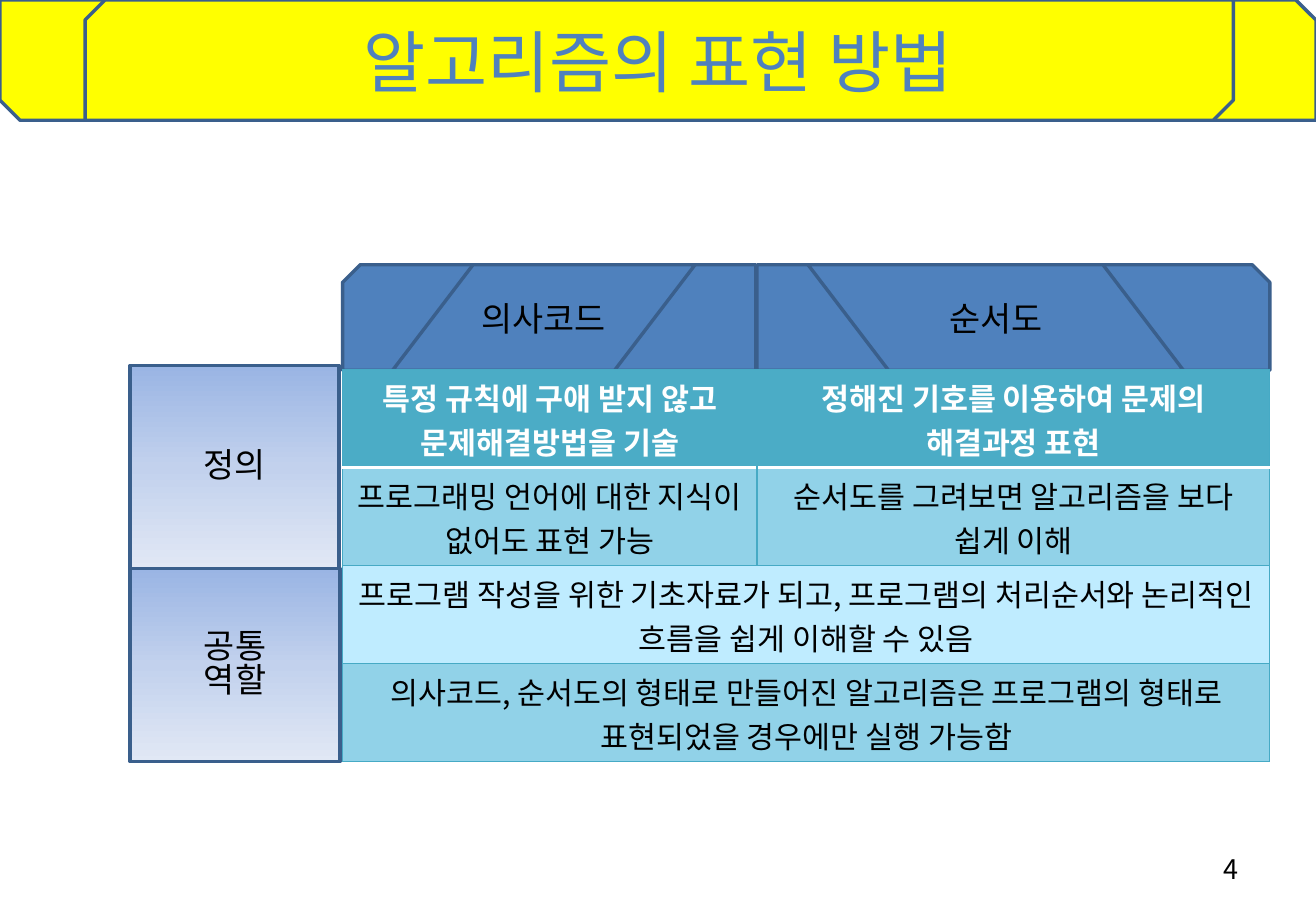
from copy import deepcopy
from dataclasses import dataclass
from typing import Optional

from lxml.etree import SubElement
from pptx import Presentation
from pptx.dml.color import RGBColor
from pptx.enum.shapes import MSO_SHAPE
from pptx.enum.text import MSO_ANCHOR, MSO_AUTO_SIZE, PP_ALIGN
from pptx.oxml.ns import qn
from pptx.util import Inches, Pt

FONT = "Noto Sans CJK KR"
CELL = Inches(0.1)  # side of one grid square
COLUMNS, ROWS = 108.3, 75

BLACK = RGBColor(0x00, 0x00, 0x00)
WHITE = RGBColor(0xFF, 0xFF, 0xFF)
YELLOW = RGBColor(0xFF, 0xFF, 0x00)
BLUE = RGBColor(0x4F, 0x81, 0xBD)
OUTLINE = RGBColor(0x3A, 0x5F, 0x8C)
TEAL = RGBColor(0x4B, 0xAC, 0xC6)
TEAL_EDGE = RGBColor(0x46, 0xAA, 0xC5)
BAND_DARK = RGBColor(0x91, 0xD2, 0xE8)
BAND_LIGHT = RGBColor(0xBF, 0xEC, 0xFF)
LABEL_GRADIENT = (
    (0, RGBColor(0x9A, 0xB5, 0xE4)),
    (0.5, RGBColor(0xC2, 0xD1, 0xED)),
    (1, RGBColor(0xE1, 0xE8, 0xF5)),
)


@dataclass(frozen=True)
class Area:
    """Place on the slide in grid columns and rows."""
    left: float
    top: float
    width: float
    height: float

    def emu(self) -> tuple[int, ...]:
        return tuple(round(n * CELL) for n in (self.left, self.top, self.width, self.height))


@dataclass(frozen=True)
class Block:
    kind: MSO_SHAPE
    area: Area
    fill: Optional[RGBColor] = None  # None gives the label gradient
    text: str = ""
    flip: str = ""
    adjustment: Optional[float] = None
    line_spacing: Optional[float] = None


@dataclass(frozen=True)
class TableRow:
    texts: tuple[str, ...]  # a single text spans both columns
    fill: RGBColor
    color: RGBColor = BLACK
    bold: bool = False


TITLE_AREA = Area(0, 0, COLUMNS, 9.9)
NUMBER_AREA = Area(77.6, 69.5, 25.3, 4)
TABLE_AREA = Area(28.2, 30.4, 76.3, 32.3)
TABLE_COLUMNS = (34.1, 42.2)
HEAD_TOP, HEAD_HEIGHT = 21.8, 8.7
SLANT = 0.762

BANNERS = (
    Block(MSO_SHAPE.SNIP_2_DIAG_RECTANGLE, TITLE_AREA, YELLOW),
    Block(MSO_SHAPE.SNIP_2_DIAG_RECTANGLE, Area(7, 0, 94.5, 9.9), YELLOW, flip="flipV"),
)
COLUMN_HEADS = (
    Block(MSO_SHAPE.SNIP_1_RECTANGLE, Area(28.2, HEAD_TOP, 34, HEAD_HEIGHT), BLUE, flip="flipH"),
    Block(MSO_SHAPE.PARALLELOGRAM, Area(32.3, HEAD_TOP, 24.9, HEAD_HEIGHT), BLUE,
          "의사코드", adjustment=SLANT),
    Block(MSO_SHAPE.SNIP_1_RECTANGLE, Area(62.3, HEAD_TOP, 42.2, HEAD_HEIGHT), BLUE),
    Block(MSO_SHAPE.PARALLELOGRAM, Area(66.5, HEAD_TOP, 30.9, HEAD_HEIGHT), BLUE,
          "순서도", "flipH", SLANT),
)
ROW_LABELS = (
    Block(MSO_SHAPE.RECTANGLE, Area(10.7, 30.1, 17.2, 16.8), text="정의", line_spacing=0.85),
    Block(MSO_SHAPE.RECTANGLE, Area(10.7, 46.8, 17.3, 15.9), text="공통\n역할", line_spacing=0.85),
)
TABLE_ROWS = (
    TableRow(("특정 규칙에 구애 받지 않고 문제해결방법을 기술",
              "정해진 기호를 이용하여 문제의 해결과정 표현"), TEAL, WHITE, True),
    TableRow(("프로그래밍 언어에 대한 지식이 없어도 표현 가능",
              "순서도를 그려보면 알고리즘을 보다 쉽게 이해"), BAND_DARK),
    TableRow(("프로그램 작성을 위한 기초자료가 되고, 프로그램의 처리순서와 "
              "논리적인 흐름을 쉽게 이해할 수 있음",), BAND_LIGHT),
    TableRow(("의사코드, 순서도의 형태로 만들어진 알고리즘은 프로그램의 형태로 "
              "표현되었을 경우에만 실행 가능함",), BAND_DARK),
)


def write(frame, text: str, size: float, color: RGBColor, bold: bool = False,
          align: PP_ALIGN = PP_ALIGN.CENTER, line_spacing: Optional[float] = None) -> None:
    frame.text = text
    frame.word_wrap = True
    frame.vertical_anchor = MSO_ANCHOR.MIDDLE
    for paragraph in frame.paragraphs:
        paragraph.alignment = align
        if line_spacing:
            paragraph.line_spacing = line_spacing
        for run in paragraph.runs:
            run.font.name = FONT
            run.font.size = Pt(size)
            run.font.bold = bold
            run.font.color.rgb = color
            SubElement(run.font._element, qn("a:ea"), typeface=FONT)


def fill_with_gradient(shape) -> None:
    shape.fill.gradient()
    shape.fill.gradient_angle = 270
    stop_list = shape.element.spPr.find(".//" + qn("a:gsLst"))
    stop_list.insert(1, deepcopy(stop_list[0]))
    for stop, (position, color) in zip(shape.fill.gradient_stops, LABEL_GRADIENT):
        stop.position = position
        stop.color.rgb = color


def draw_block(shapes, block: Block) -> None:
    shape = shapes.add_shape(block.kind, *block.area.emu())
    shape.shadow.inherit = False
    if block.fill is None:
        fill_with_gradient(shape)
    else:
        shape.fill.solid()
        shape.fill.fore_color.rgb = block.fill
    shape.line.color.rgb = OUTLINE
    shape.line.width = Pt(2)
    if block.adjustment is not None:
        shape.adjustments[0] = block.adjustment
    if block.flip:
        shape.element.spPr.xfrm.set(block.flip, "1")
    if block.text:
        write(shape.text_frame, block.text, 20, BLACK, line_spacing=block.line_spacing)


def set_edge(cell, side: str, color: Optional[RGBColor], width: float) -> None:
    edge = SubElement(cell._tc.get_or_add_tcPr(), qn(f"a:ln{side}"), w=str(Pt(width)))
    if color is None:
        SubElement(edge, qn("a:noFill"))
    else:
        SubElement(SubElement(edge, qn("a:solidFill")), qn("a:srgbClr"), val=str(color))


def edge_style(row: int, column: int, side: str) -> tuple[Optional[RGBColor], float]:
    """A white rule lies under the first row, whose two cells have no line between them."""
    if (row, side) in ((0, "B"), (1, "T")):
        return WHITE, 2
    if row == 0 and (column, side) in ((0, "R"), (1, "L")):
        return None, 0.75
    return TEAL_EDGE, 0.75


def draw_table(shapes) -> None:
    table = shapes.add_table(len(TABLE_ROWS), len(TABLE_COLUMNS), *TABLE_AREA.emu()).table
    table.first_row = table.horz_banding = False
    for column, width in zip(table.columns, TABLE_COLUMNS):
        column.width = round(width * CELL)
    for r, row in enumerate(TABLE_ROWS):
        if len(row.texts) == 1:
            table.cell(r, 0).merge(table.cell(r, 1))
        for c in range(len(TABLE_COLUMNS)):
            cell = table.cell(r, c)
            for side in "LRTB":
                set_edge(cell, side, *edge_style(r, c, side))
            cell.fill.solid()
            cell.fill.fore_color.rgb = row.fill
        for c, text in enumerate(row.texts):
            cell = table.cell(r, c)
            write(cell.text_frame, text, 18, row.color, row.bold)
            cell.vertical_anchor = MSO_ANCHOR.MIDDLE


def main() -> None:
    deck = Presentation()
    deck.slide_width, deck.slide_height = round(COLUMNS * CELL), ROWS * CELL
    shapes = deck.slides.add_slide(deck.slide_layouts[5]).shapes

    for banner in BANNERS:
        draw_block(shapes, banner)

    title = shapes.title
    title.left, title.top, title.width, title.height = TITLE_AREA.emu()
    write(title.text_frame, "알고리즘의 표현 방법", 40, BLUE)
    title.text_frame.auto_size = MSO_AUTO_SIZE.NONE
    shapes.element.append(title.element)  # in front of the banners

    number = shapes.add_textbox(*NUMBER_AREA.emu())
    write(number.text_frame, "4", 16, BLACK, align=PP_ALIGN.RIGHT)

    for blocks in (COLUMN_HEADS, ROW_LABELS):
        group = shapes.add_group_shape()
        for block in blocks:
            draw_block(group.shapes, block)
    draw_table(shapes)
    deck.save("out.pptx")


if __name__ == "__main__":
    main()
